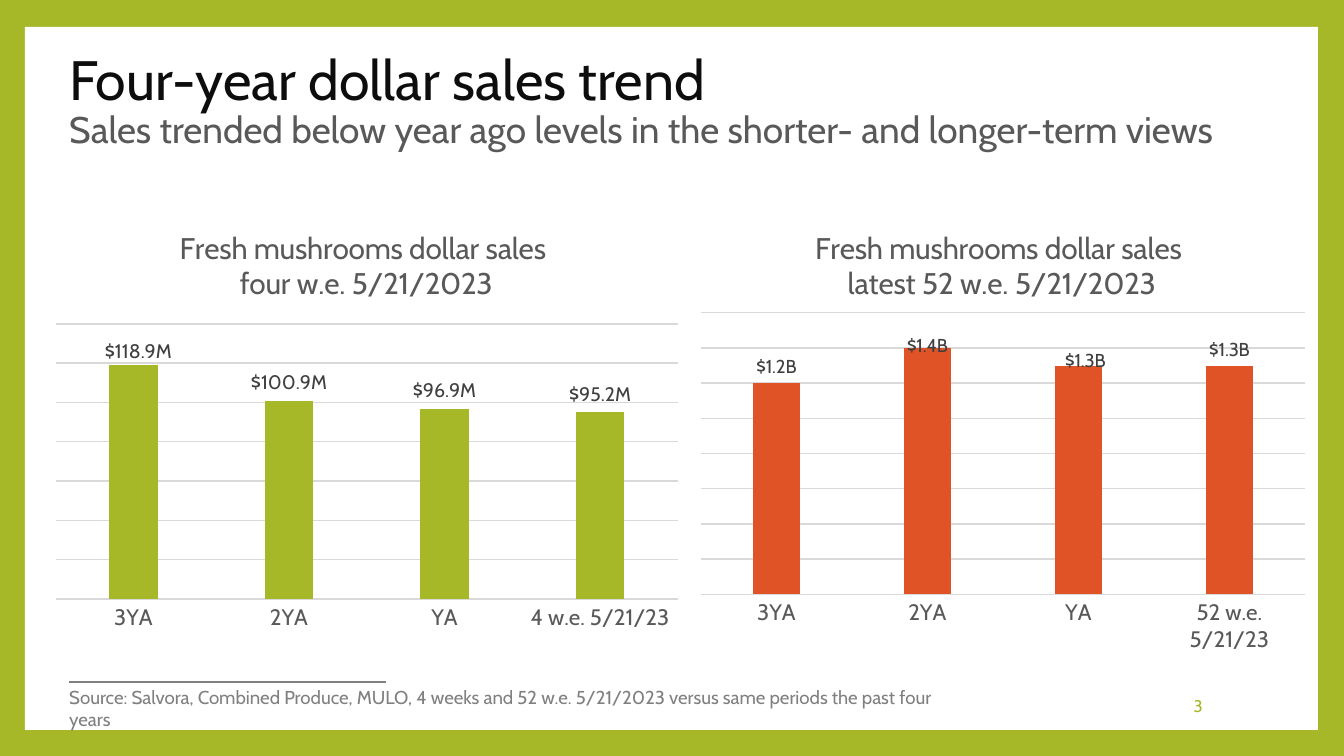
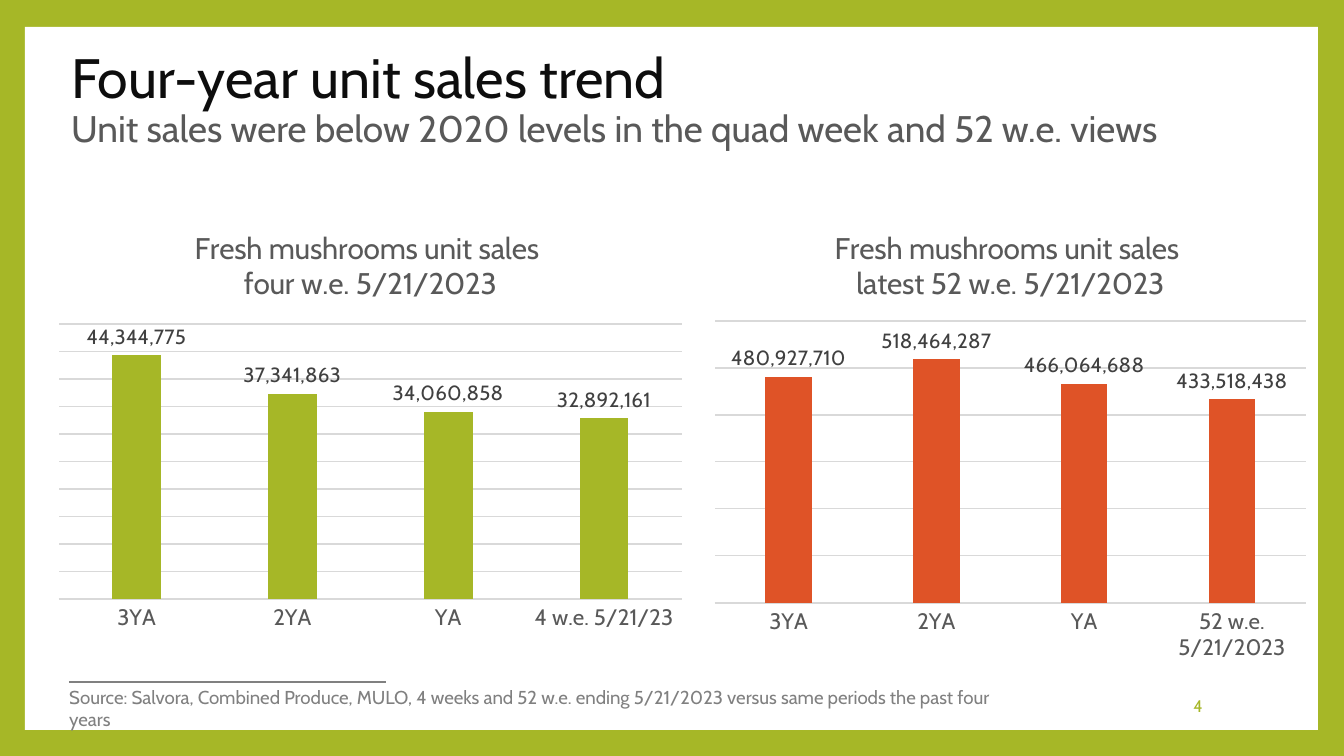
from lxml import etree
from pptx import Presentation
from pptx.chart.data import CategoryChartData
from pptx.dml.color import RGBColor
from pptx.enum import chart as ch, shapes, text
from pptx.oxml import parse_xml
from pptx.oxml.ns import nsdecls, qn
from pptx.util import Pt

FONT = "Cabin"
COLORS = {"green": "A6B727", "orange": "DF5327", "white": "FFFFFF", "black": "0D0D0D",
          "text": "595959", "label": "404040", "source": "808080", "grid": "D9D9D9"}
W, H = 1344, 756
EMU_PER_PX = 914400 * 10 / W

# Content: boxes and plots are (left, top, width, height) in px,
# label shifts are (right, down) in px by column
SLIDES = [
    {"title": "Four-year dollar sales trend",
     "subtitle": "Sales trended below year ago levels in the shorter- and longer-term views",
     "title_box": (56, 49, 1270, 106),
     "number": "3",
     "source": "Source: Salvora, Combined Produce, MULO, 4 weeks and 52 w.e. 5/21/2023 "
               "versus same periods the past four years",
     "source_width": 896,
     "charts": [
         {"title": ["Fresh mushrooms dollar sales ", "four w.e. 5/21/2023"], "title_left": 175,
          "box": (55, 208, 625, 445), "plot": (55, 324, 623, 275), "color": "green",
          "last": "4 w.e. 5/21/23", "values": [118.9e6, 100.9e6, 96.9e6, 95.2e6],
          "format": '\\$0.0,,"M"', "label_size": 10.5, "max": 140e6, "step": 20e6,
          "label_shifts": {0: (5, 4)}},
         {"title": ["Fresh mushrooms dollar sales ", "latest 52 w.e. 5/21/2023"], "title_left": 811,
          "box": (680, 208, 646, 445), "plot": (701, 313, 604, 282), "color": "orange",
          "last": "52 w.e. 5/21/23", "values": [1.2e9, 1.4e9, 1.3e9, 1.3e9],
          "format": '\\$0.0,,,"B"', "label_size": 10, "max": 1.6e9, "step": 0.2e9,
          "label_shifts": {1: (0, 14), 2: (7, 11)}},
     ]},
    {"title": "Four-year unit sales trend",
     "subtitle": "Unit sales were below 2020 levels in the quad week and 52 w.e. views",
     "title_box": (58, 48, 1218, 106),
     "number": "4",
     "source": "Source: Salvora, Combined Produce, MULO, 4 weeks and 52 w.e. ending 5/21/2023 "
               "versus same periods the past four years",
     "source_width": 954,
     "charts": [
         {"title": ["Fresh mushrooms unit sales ", "four w.e. 5/21/2023"], "title_left": 190,
          "box": (58, 208, 625, 445), "plot": (58, 324, 624, 275), "color": "green",
          "last": "4 w.e. 5/21/23", "values": [44344775, 37341863, 34060858, 32892161],
          "format": "#,##0", "label_size": 11, "max": 50e6, "step": 5e6, "label_shifts": {}},
         {"title": ["Fresh mushrooms unit sales ", "latest 52 w.e. 5/21/2023"], "title_left": 830,
          "box": (714, 208, 593, 470), "plot": (714, 321, 592, 282), "color": "orange",
          "last": "52 w.e. 5/21/2023", "values": [480927710, 518464287, 466064688, 433518438],
          "format": "#,##0", "label_size": 11, "max": 600e6, "step": 100e6, "label_shifts": {}},
     ]},
]


def px(*lengths):
    return [round(n * EMU_PER_PX) for n in lengths]


def rgb(name):
    return RGBColor.from_string(COLORS[name])


def style(font, size, color):
    font.name, font.size, font.bold = FONT, Pt(size), False
    font.color.rgb = rgb(color)


def add_run(p, words, size, color):
    r = p.add_run()
    r.text = words
    style(r.font, size, color)


def add_text(s, box, runs, anchor=text.MSO_ANCHOR.TOP, align=text.PP_ALIGN.LEFT, spacing=1.0):
    """One paragraph; each run after the first starts a new line."""
    tf = s.shapes.add_textbox(*px(*box)).text_frame
    tf.word_wrap, tf.vertical_anchor = True, anchor
    p = tf.paragraphs[0]
    p.alignment, p.line_spacing = align, spacing
    for i, run in enumerate(runs):
        if i:
            p.add_line_break()
        add_run(p, *run)


def set_layout(parent, index, **parts):
    """Place a chart part by fractions of the chart area."""
    old = parent.find(qn("c:layout"))
    if old is not None:
        parent.remove(old)
    layout = parse_xml(f"<c:layout {nsdecls('c')}><c:manualLayout/></c:layout>")
    for tag, value in parts.items():
        etree.SubElement(layout[0], qn(f"c:{tag}")).set("val", str(value))
    parent.insert(index, layout)


def add_frame(s):
    s.background.fill.solid()
    s.background.fill.fore_color.rgb = rgb("green")
    sp = s.shapes.add_shape(shapes.MSO_SHAPE.RECTANGLE, *px(25, 27, 1293, 703))
    sp.shadow.inherit = False
    sp.fill.solid()
    sp.fill.fore_color.rgb = rgb("white")
    sp.line.fill.background()
    rule = s.shapes.add_connector(shapes.MSO_CONNECTOR.STRAIGHT, *px(69, 682, 386, 682))
    rule.line.color.rgb, rule.line.width = rgb("source"), Pt(0.79)
    etree.SubElement(rule._element.spPr, qn("a:effectLst"))


def add_column_chart(s, spec):
    left, top, width, height = spec["box"]
    data = CategoryChartData(number_format=spec["format"])
    data.categories = ["3YA", "2YA", "YA", spec["last"]]
    data.add_series("Series 1", spec["values"])
    chart = s.shapes.add_chart(ch.XL_CHART_TYPE.COLUMN_CLUSTERED, *px(*spec["box"]), data).chart
    chart.has_legend = False
    style(chart.font, 10, "black")

    # Title, one paragraph a line
    chart.has_title = True
    tf = chart.chart_title.text_frame
    for i, line in enumerate(spec["title"]):
        p = tf.add_paragraph() if i else tf.paragraphs[0]
        add_run(p, line, 16, "text")

    # Axes
    cat, val = chart.category_axis, chart.value_axis
    cat.major_tick_mark = ch.XL_TICK_MARK.NONE
    style(cat.tick_labels.font, 12, "text")
    val.minimum_scale, val.maximum_scale, val.major_unit = 0, spec["max"], spec["step"]
    val.has_major_gridlines = True
    val.visible = False
    for line in (cat.format.line, val.major_gridlines.format.line):
        line.color.rgb, line.width = rgb("grid"), Pt(0.75)

    # Columns and their labels
    plot = chart.plots[0]
    plot.gap_width, plot.overlap, plot.vary_by_categories = 219, -27, False
    series = plot.series[0]
    series.format.fill.solid()
    series.format.fill.fore_color.rgb = rgb(spec["color"])
    labels = series.data_labels
    labels.show_value, labels.position = True, ch.XL_LABEL_POSITION.OUTSIDE_END
    labels.number_format, labels.number_format_is_linked = spec["format"], False
    style(labels.font, spec["label_size"], "label")
    for i in spec["label_shifts"]:
        label = series.points[i].data_label
        style(label.font, spec["label_size"], "label")
        label.position = ch.XL_LABEL_POSITION.OUTSIDE_END
    shifted = series._element.iter(qn("c:dLbl"))
    for element, (right, down) in zip(shifted, spec["label_shifts"].values()):
        set_layout(element, 1, x=right / width, y=down / height)

    # Places inside the chart
    x, y, w, h = spec["plot"]
    set_layout(chart._chartSpace.chart.plotArea, 0, layoutTarget="inner", xMode="edge",
               yMode="edge", x=(x - left) / width, y=(y - top) / height,
               w=w / width, h=h / height)
    set_layout(chart.chart_title._element, 1, xMode="edge", yMode="edge",
               x=(spec["title_left"] - left) / width, y=17 / height)


def main():
    prs = Presentation()
    prs.slide_width, prs.slide_height = px(W, H)
    for content in SLIDES:
        s = prs.slides.add_slide(prs.slide_layouts[6])
        add_frame(s)
        add_text(s, content["title_box"],
                 [(content["title"], 29.7, "black"), (content["subtitle"], 19.8, "text")],
                 anchor=text.MSO_ANCHOR.MIDDLE, spacing=0.9)
        add_text(s, (1028, 686, 188, 40), [(content["number"], 9, "green")],
                 anchor=text.MSO_ANCHOR.MIDDLE, align=text.PP_ALIGN.RIGHT)
        add_text(s, (56, 679, content["source_width"], 36), [(content["source"], 10, "source")])
        for spec in content["charts"]:
            add_column_chart(s, spec)
    prs.save("out.pptx")


if __name__ == "__main__":
    main()
